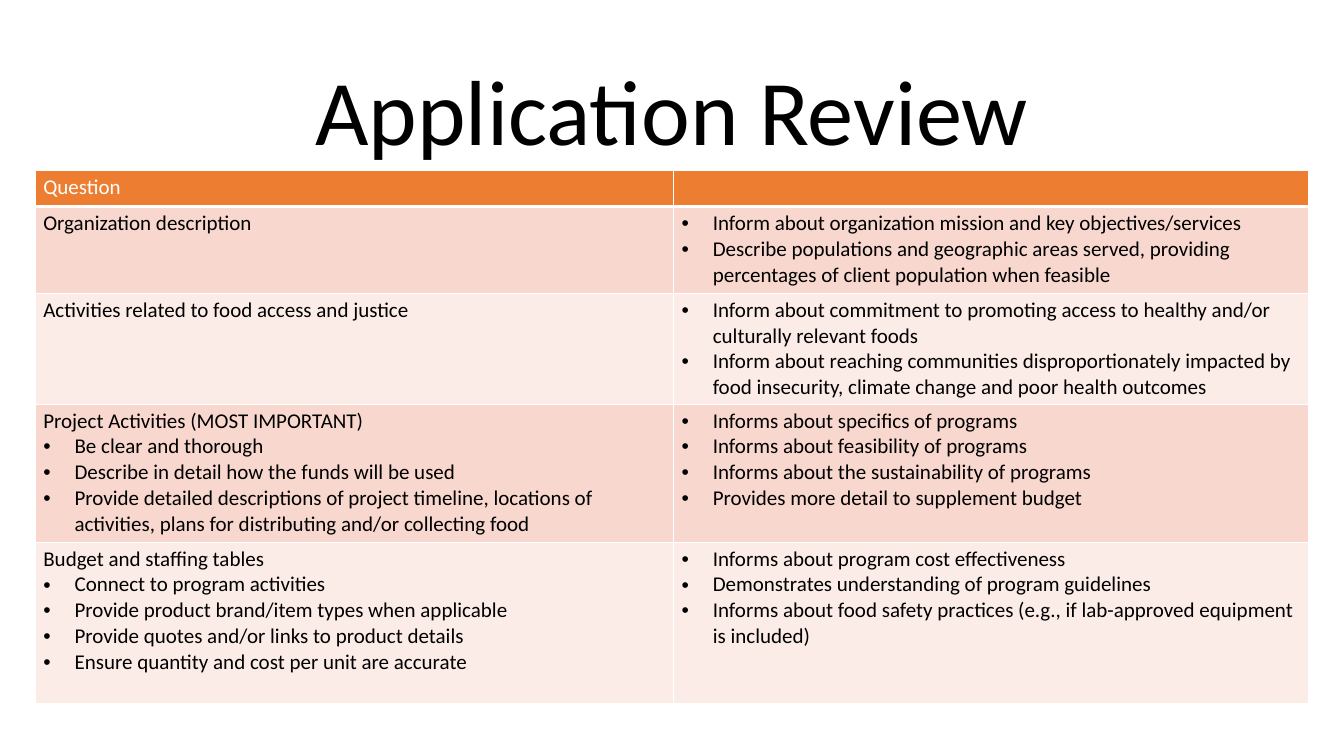
from dataclasses import dataclass

import pptx
import pptx.dml.color
import pptx.enum.text
import pptx.oxml
import pptx.oxml.ns
import pptx.util
from pptx.util import Inches


@dataclass(frozen=True)
class Theme:
    font: str = "Calibri"
    title_size: float = 66
    body_size: float = 15
    ink: str = "000000"
    white: str = "FFFFFF"
    header: str = "ED7D31"
    bands: tuple = ("F8D7CE", "FCECE8")
    rule: float = 1
    header_rule: float = 3


THEME = Theme()
COLUMN_WIDTHS = (6.33, 6.3)
HEADER_HEIGHT = 0.36

# Row height, question, tips under the question, what the answer tells
QUESTIONS = [
    (0.86, "Organization description", [], [
        "Inform about organization mission and key objectives/services",
        "Describe populations and geographic areas served, providing "
        "percentages of client population when feasible",
    ]),
    (1.1, "Activities related to food access and justice", [], [
        "Inform about commitment to promoting access to healthy and/or "
        "culturally relevant foods",
        "Inform about reaching communities disproportionately impacted by "
        "food insecurity, climate change and poor health outcomes",
    ]),
    (1.37, "Project Activities (MOST IMPORTANT)", [
        "Be clear and thorough",
        "Describe in detail how the funds will be used",
        "Provide detailed descriptions of project timeline, locations of "
        "activities, plans for distributing and/or collecting food",
    ], [
        "Informs about specifics of programs",
        "Informs about feasibility of programs",
        "Informs about the sustainability of programs",
        "Provides more detail to supplement budget",
    ]),
    (1.6, "Budget and staffing tables", [
        "Connect to program activities",
        "Provide product brand/item types when applicable",
        "Provide quotes and/or links to product details",
        "Ensure quantity and cost per unit are accurate",
    ], [
        "Informs about program cost effectiveness",
        "Demonstrates understanding of program guidelines",
        "Informs about food safety practices (e.g., if lab-approved "
        "equipment is included)",
    ]),
]


def rgb(value):
    return pptx.dml.color.RGBColor.from_string(value)


def set_font(paragraph, size, color):
    font = paragraph.font
    font.name = THEME.font
    font.size = pptx.util.Pt(size)
    font.bold = False
    font.color.rgb = rgb(color)


def add_bullet(paragraph, indent=Inches(0.31)):
    properties = paragraph._p.get_or_add_pPr()
    properties.set("marL", str(indent))
    properties.set("indent", str(-indent))
    for tag, key, value in (("buFont", "typeface", "Arial"), ("buChar", "char", "•")):
        bullet = pptx.oxml.parse_xml(
            f'<a:{tag} {pptx.oxml.ns.nsdecls("a")} {key}="{value}"/>')
        properties.append(bullet)


def set_borders(cell, bottom):
    # Borders come before the fill in the cell properties
    properties = cell._tc.get_or_add_tcPr()
    widths = {"lnL": THEME.rule, "lnR": THEME.rule, "lnT": THEME.rule, "lnB": bottom}
    for tag, width in widths.items():
        properties.append(pptx.oxml.parse_xml(
            f'<a:{tag} {pptx.oxml.ns.nsdecls("a")} w="{pptx.util.Pt(width)}">'
            f'<a:solidFill><a:srgbClr val="{THEME.white}"/></a:solidFill></a:{tag}>'))


def fill_cell(cell, heading, bullets, fill, color, bottom=THEME.rule):
    set_borders(cell, bottom)
    cell.fill.solid()
    cell.fill.fore_color.rgb = rgb(fill)
    cell.margin_left = cell.margin_right = Inches(0.08)
    cell.margin_top = cell.margin_bottom = Inches(0.04)

    lines = [(heading, False)] if heading else []
    lines += [(bullet, True) for bullet in bullets]
    frame = cell.text_frame
    for index, (text, bulleted) in enumerate(lines):
        paragraph = frame.add_paragraph() if index else frame.paragraphs[0]
        paragraph.text = text
        if bulleted:
            add_bullet(paragraph)
        set_font(paragraph, THEME.body_size, color)
    if not lines:
        # An empty cell takes its line height from the end mark
        frame.paragraphs[0]._p.append(pptx.oxml.parse_xml(
            f'<a:endParaRPr {pptx.oxml.ns.nsdecls("a")} '
            f'sz="{THEME.body_size * 100}"/>'))


def add_title(slide, left, top, width, height):
    frame = slide.shapes.add_textbox(left, top, width, height).text_frame
    frame.word_wrap = True
    frame.vertical_anchor = pptx.enum.text.MSO_ANCHOR.MIDDLE
    title = frame.paragraphs[0]
    title.text = "Application Review"
    title.alignment = pptx.enum.text.PP_ALIGN.CENTER
    title.line_spacing = 0.9
    set_font(title, THEME.title_size, THEME.ink)


def add_review_table(slide, left, top, width, height):
    review = slide.shapes.add_table(
        len(QUESTIONS) + 1, len(COLUMN_WIDTHS), left, top, width, height).table
    for column, column_width in zip(review.columns, COLUMN_WIDTHS):
        column.width = Inches(column_width)

    # Header row
    review.rows[0].height = Inches(HEADER_HEIGHT)
    for column, heading in enumerate(("Question", "")):
        fill_cell(review.cell(0, column), heading, [], THEME.header,
                  THEME.white, THEME.header_rule)

    # Question rows in alternating bands
    for row, (row_height, question, tips, purposes) in enumerate(QUESTIONS, start=1):
        review.rows[row].height = Inches(row_height)
        band = THEME.bands[(row - 1) % len(THEME.bands)]
        fill_cell(review.cell(row, 0), question, tips, band, THEME.ink)
        fill_cell(review.cell(row, 1), "", purposes, band, THEME.ink)


def main():
    deck = pptx.Presentation()
    deck.slide_width, deck.slide_height = Inches(13.33), Inches(7.5)
    slide = deck.slides.add_slide(deck.slide_layouts[6])
    add_title(slide, Inches(0.7), Inches(0.46), Inches(11.93), Inches(1.37))
    table_height = HEADER_HEIGHT + sum(question[0] for question in QUESTIONS)
    add_review_table(slide, Inches(0.35), Inches(1.69),
                     Inches(sum(COLUMN_WIDTHS)), Inches(table_height))
    deck.save("out.pptx")


if __name__ == "__main__":
    main()
